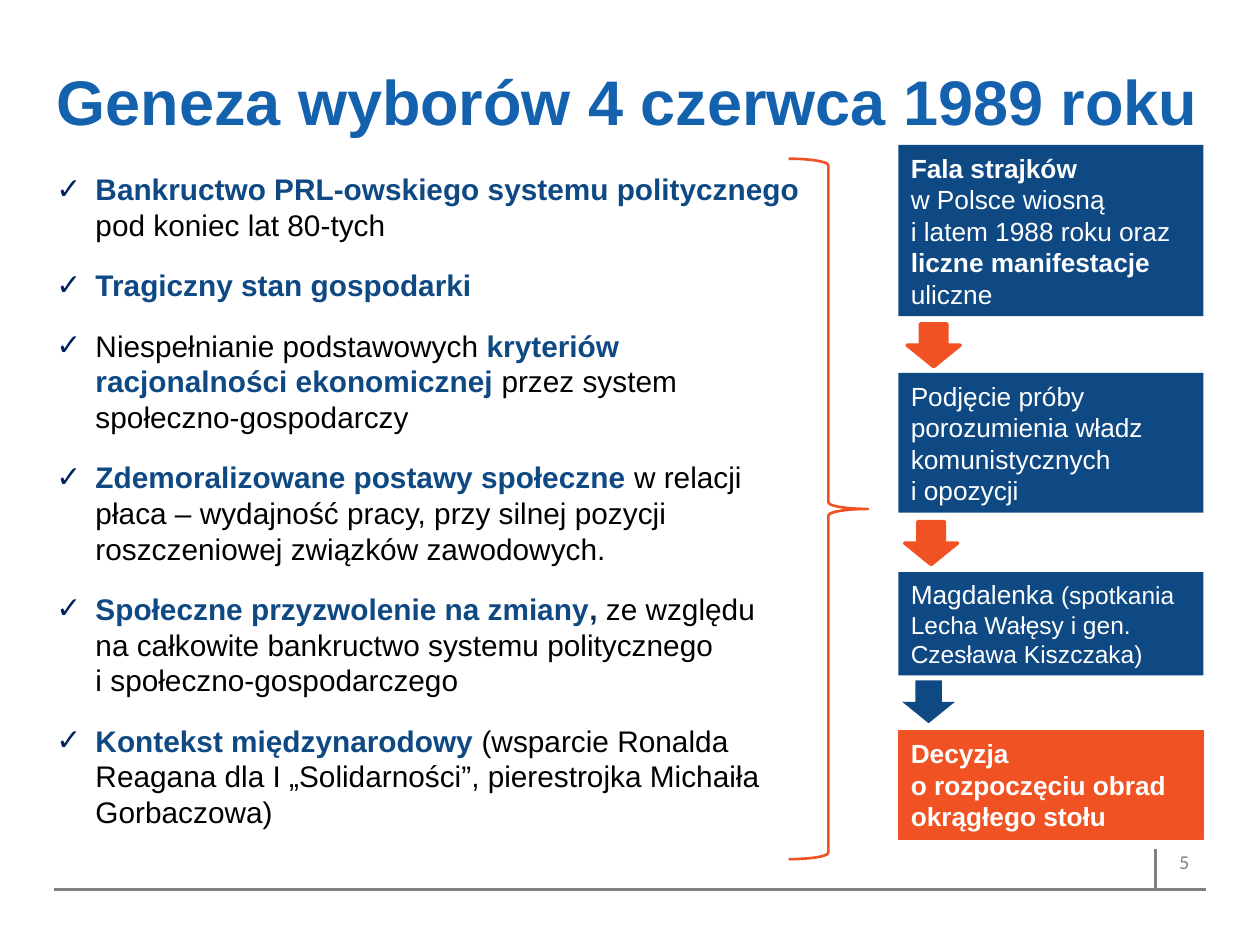
import pptx
import pptx.util
import pptx.dml.color
import pptx.enum.shapes
import pptx.enum.text
import pptx.oxml
import pptx.oxml.ns
from pptx.util import Inches

NAVY, ORANGE, GREY, BLACK, WHITE = "0F4983", "F05223", "808080", "000000", "FFFFFF"
SHAPE = pptx.enum.shapes.MSO_SHAPE
ANCHOR = pptx.enum.text.MSO_ANCHOR

KEY = {"size": 17, "bold": True, "color": NAVY}
PLAIN = {"size": 17, "bold": False, "color": BLACK}
STEP = {"size": 15, "bold": False, "color": WHITE}
STRONG = {**STEP, "bold": True}

CAUSES = [
    [("Bankructwo PRL-owskiego systemu politycznego \n", KEY), ("pod koniec lat 80-tych", PLAIN)],
    [("Tragiczny stan gospodarki", KEY)],
    [("Niespełnianie podstawowych ", PLAIN), ("kryteriów racjonalności ekonomicznej ", KEY),
     ("przez system społeczno-gospodarczy", PLAIN)],
    [("Zdemoralizowane postawy społeczne ", KEY),
     ("w relacji płaca – wydajność pracy, przy silnej pozycji roszczeniowej związków zawodowych.", PLAIN)],
    [("Społeczne przyzwolenie na zmiany", KEY), (", ", {**KEY, "color": "0A3057"}),
     ("ze względu \nna całkowite bankructwo systemu politycznego \ni społeczno-gospodarczego", PLAIN)],
    [("Kontekst międzynarodowy ", KEY),
     ("(wsparcie Ronalda Reagana dla I „Solidarności”, pierestrojka Michaiła Gorbaczowa)", PLAIN)],
]

STEPS = [
    (0, 1.36, NAVY, [("Fala strajków \n", STRONG), ("w Polsce wiosną \ni latem 1988 roku oraz ", STEP),
                     ("liczne manifestacje ", STRONG), ("uliczne", STEP)]),
    (1.81, 1.11, NAVY, [("Podjęcie próby porozumienia władz komunistycznych\ni opozycji", STEP)]),
    (3.39, 0.82, NAVY, [("Magdalenka ", STEP),
                        ("(spotkania Lecha Wałęsy i gen. Czesława Kiszczaka)", {**STEP, "size": 14})]),
    (4.65, 0.86, ORANGE, [("Decyzja \no rozpoczęciu obrad okrągłego stołu", STRONG)]),
]
ARROWS = [(0.07, 1.42, ORANGE, 2), (0.05, 2.99, ORANGE, 2), (0.03, 4.25, NAVY, 0)]


def rgb(value):
    """Turn a hex string into a colour."""
    return pptx.dml.color.RGBColor.from_string(value)


def write(p, spans):
    """Add formatted runs to a paragraph, breaking lines at newlines."""
    for text, style in spans:
        style = {"name": "Arial", **style}
        for i, line in enumerate(text.split("\n")):
            if i:
                p.add_line_break()
            if line:
                r = p.add_run()
                r.text = line
                for key, value in style.items():
                    if key == "color":
                        r.font.color.rgb = rgb(value)
                    else:
                        setattr(r.font, key, pptx.util.Pt(value) if key == "size" else value)


def set_frame(tf, anchor=ANCHOR.TOP):
    """Give a text frame wrapping, an anchor and the usual margins."""
    values = {"word_wrap": True, "vertical_anchor": anchor, "margin_left": Inches(0.1),
              "margin_right": Inches(0.1), "margin_top": Inches(0.05), "margin_bottom": Inches(0.05)}
    for key, value in values.items():
        setattr(tf, key, value)


def add_text(s, x, y, w, h):
    """Add an empty text box and return its frame."""
    tf = s.shapes.add_textbox(Inches(x), Inches(y), Inches(w), Inches(h)).text_frame
    set_frame(tf)
    return tf


def add_shape(s, kind, x, y, w, h, fill=None, line=None, width=0):
    """Add a flat preset shape."""
    sp = s.shapes.add_shape(kind, Inches(x), Inches(y), Inches(w), Inches(h))
    sp.shadow.inherit = False
    if fill:
        sp.fill.solid()
        sp.fill.fore_color.rgb = rgb(fill)
    else:
        sp.fill.background()
    if width:
        sp.line.color.rgb = rgb(line)
        sp.line.width = pptx.util.Pt(width)
    else:
        sp.line.fill.background()
    return sp


def add_title(s, x, y, w, h):
    """Place and format the title placeholder."""
    sp = s.shapes.title
    for key, value in zip(("left", "top", "width", "height"), (x, y, w, h)):
        setattr(sp, key, Inches(value))
    set_frame(sp.text_frame, ANCHOR.MIDDLE)
    sp.text_frame.auto_size = pptx.enum.text.MSO_AUTO_SIZE.NONE
    p = sp.text_frame.paragraphs[0]
    p.alignment = pptx.enum.text.PP_ALIGN.LEFT
    write(p, [("Geneza wyborów 4 czerwca 1989 roku", {"size": 36, "bold": True, "color": "1461AE"})])


def add_causes(s, x, y, w, h):
    """Write the list of causes with check-mark bullets."""
    tf = add_text(s, x, y, w, h)
    ns = pptx.oxml.ns.nsdecls("a")
    for i, spans in enumerate(CAUSES):
        p = tf.add_paragraph() if i else tf.paragraphs[0]
        p.space_after = pptx.util.Pt(14)
        props = p._p.get_or_add_pPr()
        props.set("marL", str(Inches(0.31)))
        props.set("indent", str(-Inches(0.31)))
        for xml in (f'<a:buClr {ns}><a:srgbClr val="002060"/></a:buClr>',
                    f'<a:buFont {ns} typeface="Arial"/>',
                    f'<a:buChar {ns} char="✓"/>'):
            props.append(pptx.oxml.parse_xml(xml))
        write(p, spans)


def add_steps(s, x, y, w):
    """Stack the event boxes with arrows between them."""
    for top, height, color, spans in STEPS:
        width = 0.75 if color == ORANGE else 0
        sp = add_shape(s, SHAPE.RECTANGLE, x, y + top, w, height, color, color, width)
        set_frame(sp.text_frame, ANCHOR.MIDDLE)
        p = sp.text_frame.paragraphs[0]
        p.alignment = pptx.enum.text.PP_ALIGN.LEFT
        write(p, spans)
    for left, top, color, width in ARROWS:
        add_shape(s, SHAPE.DOWN_ARROW, x + left, y + top, 0.42, 0.34, color, color, width)


def add_footer(s, x, y, w, h):
    """Draw the footer rules and the slide number."""
    bottom, tick = y + h, x + w - 0.4
    for ends in ((x + w, bottom, x, bottom), (tick, y, tick, bottom)):
        c = s.shapes.add_connector(pptx.enum.shapes.MSO_CONNECTOR.STRAIGHT, *map(Inches, ends))
        c.line.color.rgb = rgb(GREY)
        c.line.width = pptx.util.Pt(2)
        c._element.spPr.append(pptx.oxml.parse_xml(f'<a:effectLst {pptx.oxml.ns.nsdecls("a")}/>'))
    tf = add_text(s, tick + 0.09, y - 0.03, 0.63, 0.5)
    write(tf.paragraphs[0], [("5", {"name": "Lato", "size": 10, "color": GREY})])


def main():
    """Build the slide and save it."""
    prs = pptx.Presentation()
    prs.slide_width, prs.slide_height = Inches(10), Inches(7.5)
    s = prs.slides.add_slide(prs.slide_layouts[5])
    add_footer(s, 0.43, 6.74, 9.14, 0.32)
    add_title(s, 0.35, 0.44, 9.45, 0.71)
    add_causes(s, 0.35, 1.31, 6.23, 5.37)
    add_shape(s, SHAPE.RIGHT_BRACE, 6.26, 1.26, 0.63, 5.56, line=ORANGE, width=1.5)
    add_steps(s, 7.13, 1.15, 2.42)
    prs.save("out.pptx")


if __name__ == "__main__":
    main()
